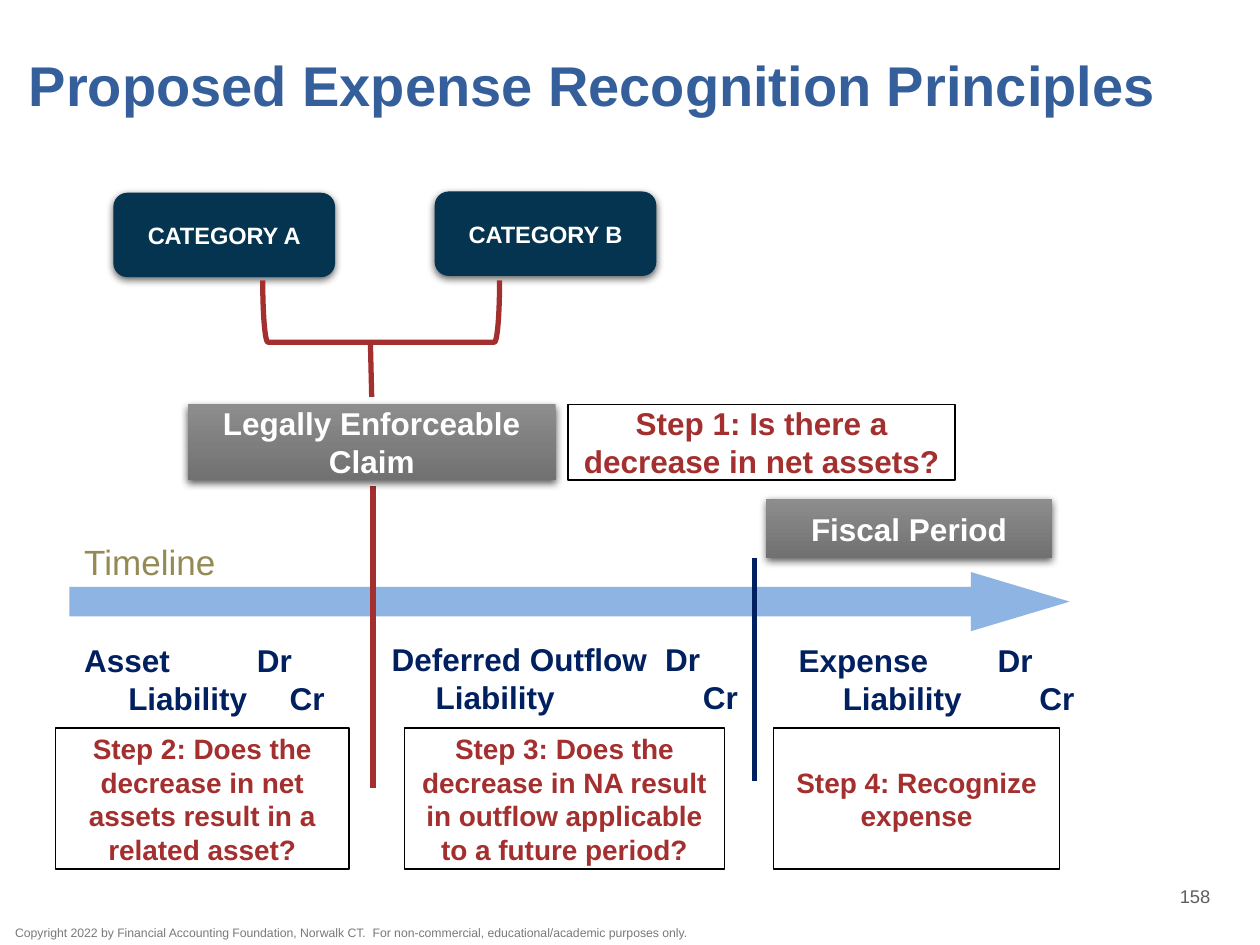
from dataclasses import dataclass
from lxml.etree import SubElement
from pptx import Presentation
from pptx.dml.color import RGBColor
from pptx.enum.shapes import MSO_CONNECTOR, MSO_SHAPE
from pptx.enum.text import MSO_ANCHOR, PP_ALIGN
from pptx.oxml.ns import qn
from pptx.util import Inches, Pt


@dataclass(frozen=True)
class Theme:
    font: str = "Arial"
    title: str = "355F9A"
    teal: str = "04344F"
    red: str = "A32F2F"
    navy: str = "002060"
    sky: str = "8EB4E3"
    olive: str = "948A54"
    light: str = "8D8D8D"
    dark: str = "717171"
    number: str = "5F5F5F"
    note: str = "78797B"
    white: str = "FFFFFF"
    black: str = "000000"
    head: float = 32
    label: float = 20
    body: float = 18
    step: float = 16
    tag: float = 13.5
    page: float = 10.5
    small: float = 7


class Painter:
    def __init__(self, slide, theme):
        self.slide = slide
        self.theme = theme

    def style(self, para, size, color, bold):
        para.font.name = self.theme.font
        para.font.size = Pt(size)
        para.font.bold = bold
        para.font.color.rgb = RGBColor.from_string(color)

    def label(self, shape, words, size, color, bold=True, align=PP_ALIGN.CENTER,
              anchor=MSO_ANCHOR.MIDDLE):
        frame = shape.text_frame
        frame.word_wrap = True
        frame.vertical_anchor = anchor
        frame.text = words
        para = frame.paragraphs[0]
        para.alignment = align
        self.style(para, size, color, bold)
        return frame

    def text(self, box, words, size, color, bold=False, align=PP_ALIGN.LEFT,
             anchor=MSO_ANCHOR.TOP, inset=None):
        shape = self.slide.shapes.add_textbox(*map(Inches, box))
        frame = self.label(shape, words, size, color, bold, align, anchor)
        if inset is not None:
            frame.margin_left = Inches(inset)
            frame.margin_right = frame.margin_top = frame.margin_bottom = 0
        return frame

    def shape(self, kind, box, fill=None, line=None, width=1):
        shape = self.slide.shapes.add_shape(kind, *map(Inches, box))
        shape.shadow.inherit = False
        if fill:
            shape.fill.solid()
            shape.fill.fore_color.rgb = RGBColor.from_string(fill)
        else:
            shape.fill.background()
        if line:
            shape.line.color.rgb = RGBColor.from_string(line)
            shape.line.width = Pt(width)
        else:
            shape.line.fill.background()
        return shape

    def shade(self, shape):
        effects = shape.element.spPr.find(qn("a:effectLst"))
        shadow = SubElement(effects, qn("a:outerShdw"), blurRad=str(Pt(4.5)),
                            dist=str(Pt(1.5)), dir="5400000", rotWithShape="0")
        color = SubElement(shadow, qn("a:srgbClr"), val=self.theme.black)
        SubElement(color, qn("a:alpha"), val="63000")

    def tag(self, box, words):
        shape = self.shape(MSO_SHAPE.ROUNDED_RECTANGLE, box, self.theme.teal)
        self.shade(shape)
        self.label(shape, words, self.theme.tag, self.theme.white)

    def banner(self, box, words):
        shape = self.shape(MSO_SHAPE.RECTANGLE, box)
        shape.fill.gradient()
        shape.fill.gradient_angle = 270
        for stop, color in zip(shape.fill.gradient_stops, (self.theme.light, self.theme.dark)):
            stop.color.rgb = RGBColor.from_string(color)
        self.shade(shape)
        self.label(shape, words, self.theme.body, self.theme.white)

    def step(self, box, words, size):
        shape = self.shape(MSO_SHAPE.RECTANGLE, box, self.theme.white, self.theme.black)
        self.label(shape, words, size, self.theme.red)

    def line(self, start, end, color):
        link = self.slide.shapes.add_connector(MSO_CONNECTOR.STRAIGHT,
                                               *map(Inches, start + end))
        link.line.color.rgb = RGBColor.from_string(color)
        link.line.width = Pt(3)
        SubElement(link._element.spPr, qn("a:effectLst"))

    def entry(self, box, account, debit, credit):
        frame = self.slide.shapes.add_textbox(*map(Inches, box)).text_frame
        frame.word_wrap = True
        frame.text = f"{account}\tDr\n\tLiability\tCr"
        for para, stops in zip(frame.paragraphs, ([debit], [0.35, credit])):
            tabs = SubElement(para._p.get_or_add_pPr(), qn("a:tabLst"))
            for stop in stops:
                SubElement(tabs, qn("a:tab"), pos=str(Inches(stop)), algn="l")
            self.style(para, self.theme.body, self.theme.navy, True)


def main():
    deck = Presentation()
    deck.slide_width, deck.slide_height = Inches(10), Inches(7.5)
    theme = Theme()
    art = Painter(deck.slides.add_slide(deck.slide_layouts[6]), theme)

    art.text((0.12, 7.34, 5.43, 0.14),
             "Copyright 2022 by Financial Accounting Foundation, Norwalk CT.  "
             "For non-commercial, educational/academic purposes only.",
             theme.small, theme.note, inset=0)
    title = art.text((0.13, 0.19, 9.49, 0.98), "Proposed Expense Recognition Principles",
                     theme.head, theme.title, True, anchor=MSO_ANCHOR.MIDDLE, inset=0.1)
    title.paragraphs[0].line_spacing = Pt(37)
    art.text((8.97, 6.95, 1.03, 0.33), "158", theme.page, theme.number,
             align=PP_ALIGN.CENTER, anchor=MSO_ANCHOR.MIDDLE)

    art.tag((3.45, 1.52, 1.76, 0.67), "CATEGORY B")
    art.tag((0.9, 1.53, 1.76, 0.67), "CATEGORY A")
    bracket = art.shape(MSO_SHAPE.RIGHT_BRACKET, (2.78, 1.53, 0.49, 1.88),
                        line=theme.red, width=3)
    bracket.rotation = 90
    art.line((2.94, 2.72), (2.95, 3.15), theme.red)

    arrow = art.shape(MSO_SHAPE.RIGHT_ARROW, (0.55, 4.54, 7.94, 0.47), theme.sky)
    arrow.adjustments[1] = 1.67
    art.text((0.57, 4.24, 1.52, 0.44), "Timeline", theme.label, theme.olive)
    art.line((2.96, 3.86), (2.96, 6.25), theme.red)
    art.line((5.99, 4.43), (5.99, 6.2), theme.navy)

    art.banner((1.49, 3.21, 2.92, 0.6), "Legally Enforceable Claim")
    art.banner((6.08, 3.96, 2.27, 0.47), "Fiscal Period")
    art.step((4.51, 3.21, 3.07, 0.6), "Step 1: Is there a decrease in net assets?", theme.body)

    for box, account, debit, credit in (
        ((0.57, 5.04, 2.26, 0.71), "Asset", 1.37, 1.63),
        ((3.01, 5.03, 3.22, 0.71), "Deferred Outflow", 2.17, 2.47),
        ((6.24, 5.04, 2.42, 0.71), "Expense", 1.58, 1.91),
    ):
        art.entry(box, account, debit, credit)

    for left, width, words in (
        (0.44, 2.33, "Step 2: Does the decrease in net assets result in a related asset?"),
        (3.21, 2.54, "Step 3: Does the decrease in NA result in outflow applicable "
                     "to a future period?"),
        (6.14, 2.27, "Step 4: Recognize expense"),
    ):
        art.step((left, 5.78, width, 1.12), words, theme.step)

    deck.save("out.pptx")


if __name__ == "__main__":
    main()
